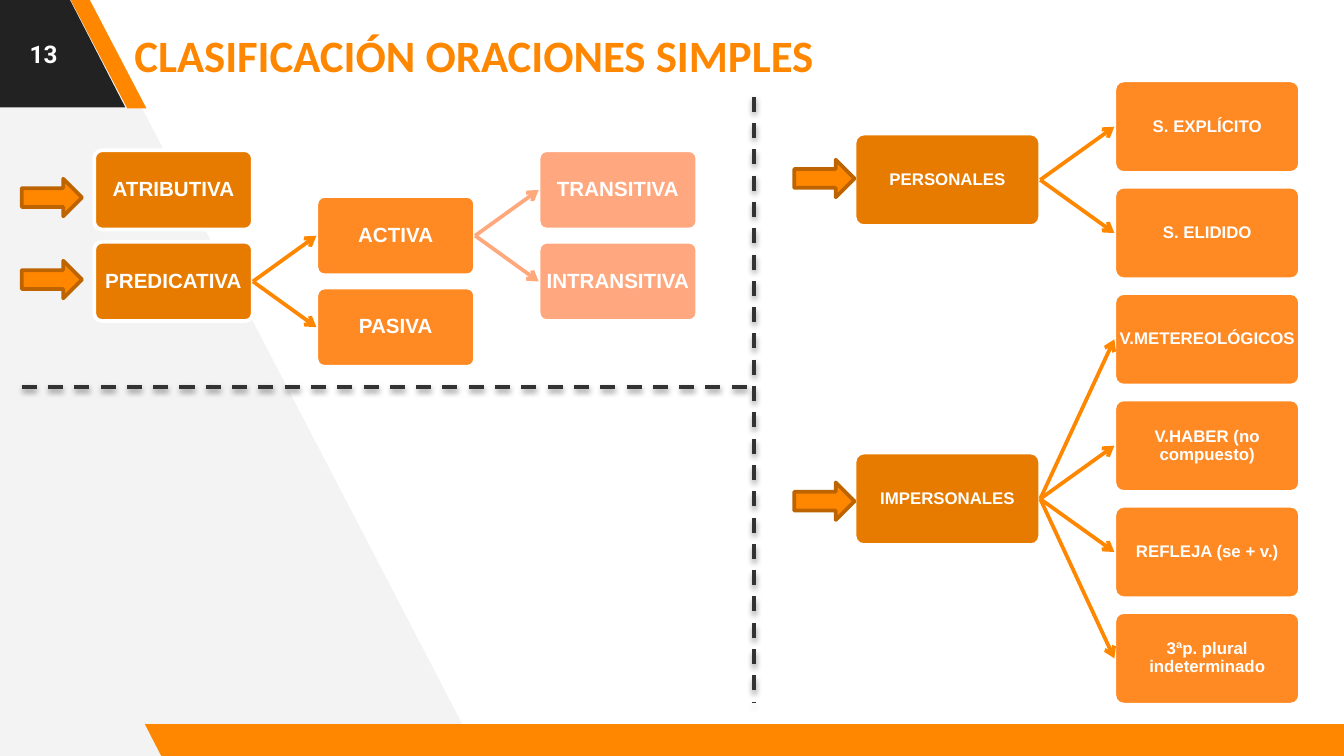
"""Build a slide that classifies simple sentences with three branching diagrams."""
from dataclasses import dataclass

from lxml import etree
from pptx import Presentation
from pptx.dml import color
from pptx.enum import dml, shapes, text
from pptx.oxml import ns
from pptx import util as u

ORANGE, DARK, MID, LIGHT = "FF8700", "E77B00", "FF8922", "FFA87F"
WHITE, CHARCOAL, GREY = "FFFFFF", "222222", "F3F3F3"


@dataclass
class Grid:
    left: float
    top: float
    column_step: float
    row_step: float
    width: float
    height: float
    size: int


@dataclass
class Node:
    label: str
    column: int
    row: float
    fill: str
    parent: str = ""
    link: str = ORANGE


@dataclass
class Band:
    left: float
    top: float
    width: float
    height: float
    slant: float
    fill: str


VOICE_GRID = Grid(1.78, 2.84, 4.2, 1.73, 3, 1.5, 11)
SUBJECT_GRID = Grid(16.15, 1.52, 4.91, 2.01, 3.51, 1.75, 9)

VOICE_NODES = [
    Node("ATRIBUTIVA", 0, 0, DARK),
    Node("PREDICATIVA", 0, 1, DARK),
    Node("ACTIVA", 1, 0.5, MID, "PREDICATIVA"),
    Node("TRANSITIVA", 2, 0, LIGHT, "ACTIVA", "FFA87C"),
    Node("INTRANSITIVA", 2, 1, LIGHT, "ACTIVA", "FFA87C"),
    Node("PASIVA", 1, 1.5, MID, "PREDICATIVA"),
]
SUBJECT_NODES = [
    Node("PERSONALES", 0, 0.5, DARK),
    Node("IMPERSONALES", 0, 3.5, DARK),
]
SUBJECT_LEAVES = {
    "PERSONALES": ["S. EXPLÍCITO", "S. ELIDIDO"],
    "IMPERSONALES": ["V.METEREOLÓGICOS", "V.HABER (no compuesto)",
                     "REFLEJA (se + v.)", "3ªp. plural indeterminado"],
}
LEAF_PAIRS = [(parent, leaf) for parent, leaves in SUBJECT_LEAVES.items() for leaf in leaves]
SUBJECT_NODES += [Node(leaf, 1, row, MID, parent) for row, (parent, leaf) in enumerate(LEAF_PAIRS)]

BANDS = [
    Band(-2.51, -0.05, 4.88, 2.08, 0.515, CHARCOAL),
    Band(1.32, -0.03, 1.45, 2.08, 0.75, ORANGE),
    Band(2.74, 13.69, 23.24, 0.64, 0.515, ORANGE),
]
POINTERS = [(0.41, 3.38), (0.41, 4.93), (15.01, 3.02), (15.01, 9.12)]
DIVIDERS = [(0.41, 7.32, 14.25, 7.32), (14.25, 1.83, 14.25, 13.28)]


def rgb(value: str) -> color.RGBColor:
    return color.RGBColor.from_string(value)


def paint(shape, fill: str, line: str = "") -> None:
    shape.shadow.inherit = False
    shape.fill.solid()
    shape.fill.fore_color.rgb = rgb(fill)
    if line:
        shape.line.color.rgb = rgb(line)
        shape.line.width = u.Pt(2)
    else:
        shape.line.fill.background()


def write(shape, words: str, font: str, size: int, ink: str, align, margin: float) -> None:
    frame = shape.text_frame
    frame.text = words
    frame.word_wrap = True
    frame.auto_size = text.MSO_AUTO_SIZE.NONE
    frame.vertical_anchor = text.MSO_ANCHOR.MIDDLE
    frame.margin_left = frame.margin_right = u.Cm(margin)
    frame.margin_top = frame.margin_bottom = u.Cm(margin)
    para = frame.paragraphs[0]
    para.alignment = align
    for span in para.runs:
        span.font.name, span.font.size, span.font.bold = font, u.Pt(size), True
        span.font.color.rgb = rgb(ink)


def add_backdrop(page) -> None:
    corners = [(9.04, 14.27), (1.57, -0.1), (-0.15, -0.1), (-0.05, 14.38)]
    points = [(u.Cm(x), u.Cm(y)) for x, y in corners]
    builder = page.shapes.build_freeform(*points[0])
    builder.add_line_segments(points[1:], close=True)
    paint(builder.convert_to_shape(), GREY)
    for band in BANDS:
        shape = page.shapes.add_shape(shapes.MSO_SHAPE.PARALLELOGRAM, u.Cm(band.left),
                                      u.Cm(band.top), u.Cm(band.width), u.Cm(band.height))
        shape.adjustments[0] = band.slant
        shape.element.spPr.get_or_add_xfrm().set("flipH", "1")
        paint(shape, band.fill)


def add_line(page, ends, ink: str):
    line = page.shapes.add_connector(shapes.MSO_CONNECTOR.STRAIGHT, *map(u.Cm, ends))
    line.line.color.rgb = rgb(ink)
    line.line.width = u.Pt(2)
    effects = etree.SubElement(line.element.spPr, ns.qn("a:effectLst"))
    return line, effects


def add_link(page, parent, child, ink: str) -> None:
    link, _ = add_line(page, (0, 0, 0, 0), ink)
    link.begin_connect(parent, 3)
    link.end_connect(child, 1)
    etree.SubElement(link.line._get_or_add_ln(), ns.qn("a:tailEnd"), type="arrow")


def add_divider(page, ends) -> None:
    divider, effects = add_line(page, ends, "333333")
    divider.line.dash_style = dml.MSO_LINE.DASH
    shadow = etree.SubElement(effects, ns.qn("a:outerShdw"), blurRad=str(u.Pt(3.1)),
                              dist=str(u.Pt(1.6)), dir="5400000", rotWithShape="0")
    ink = etree.SubElement(shadow, ns.qn("a:srgbClr"), val="000000")
    etree.SubElement(ink, ns.qn("a:alpha"), val="38000")


def add_tree(page, grid: Grid, nodes: list[Node]) -> None:
    boxes = {}
    for node in nodes:
        box = page.shapes.add_shape(
            shapes.MSO_SHAPE.ROUNDED_RECTANGLE,
            u.Cm(grid.left + node.column * grid.column_step),
            u.Cm(grid.top + node.row * grid.row_step), u.Cm(grid.width), u.Cm(grid.height))
        box.adjustments[0] = 0.1
        paint(box, node.fill, WHITE)
        write(box, node.label, "Arial", grid.size, WHITE, text.PP_ALIGN.CENTER, 0.02)
        box.text_frame.paragraphs[0].line_spacing = 0.9
        boxes[node.label] = box
        if node.parent:
            add_link(page, boxes[node.parent], box, node.link)


def main() -> None:
    deck = Presentation()
    deck.slide_width, deck.slide_height = u.Cm(25.4), u.Cm(14.29)
    page = deck.slides.add_slide(deck.slide_layouts[5])
    add_backdrop(page)

    title = page.shapes.title
    title.left, title.top, title.width, title.height = map(u.Cm, (2.29, 0.2, 23.11, 1.65))
    write(title, "CLASIFICACIÓN ORACIONES SIMPLES", "Calibri", 24, ORANGE,
          text.PP_ALIGN.LEFT, 0.25)
    number = page.shapes.add_textbox(*map(u.Cm, (0, 0, 1.65, 2.03)))
    write(number, "13", "Roboto", 13, WHITE, text.PP_ALIGN.CENTER, 0.25)

    add_tree(page, VOICE_GRID, VOICE_NODES)
    add_tree(page, SUBJECT_GRID, SUBJECT_NODES)
    for left, top in POINTERS:
        pointer = page.shapes.add_shape(shapes.MSO_SHAPE.RIGHT_ARROW,
                                        *map(u.Cm, (left, top, 1.14, 0.71)))
        paint(pointer, ORANGE, "BD6400")
    for ends in DIVIDERS:
        add_divider(page, ends)
    deck.save("out.pptx")


if __name__ == "__main__":
    main()
